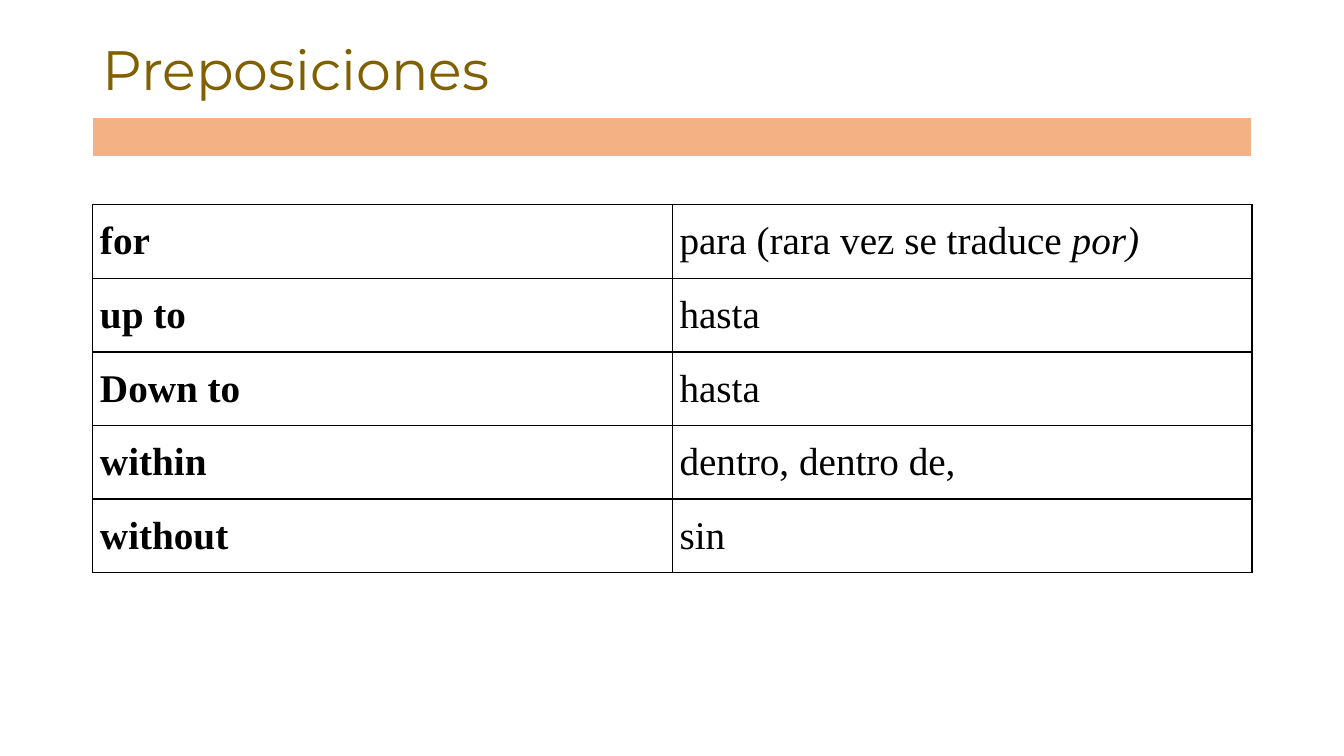
from lxml import etree
from pptx import Presentation
from pptx.dml.color import RGBColor
from pptx.enum.text import MSO_ANCHOR, MSO_AUTO_SIZE
from pptx.oxml.ns import qn
from pptx.util import Cm, Pt

MIDDLE = MSO_ANCHOR.MIDDLE
NO_AUTOFIT = MSO_AUTO_SIZE.NONE
TITLE_ONLY = 5

COLORS = {"title": "806000", "bar": "F4B183", "ink": "000000", "paper": "FFFFFF"}
TITLE_FONT = "Montserrat"
TABLE_FONT = "Times New Roman"

LEFT, WIDTH = 2.34, 29.21
PREPOSITIONS = [
    ("for", "para (rara vez se traduce ", "por)"),
    ("up to", "hasta", ""),
    ("Down to", "hasta", ""),
    ("within", "dentro, dentro de,", ""),
    ("without", "sin", ""),
]


def add_text(paragraph, text, font=TABLE_FONT, size=28, color="ink", bold=False, italic=False):
    run = paragraph.add_run()
    run.text = text
    run.font.name = font
    run.font.size = Pt(size)
    run.font.color.rgb = RGBColor.from_string(COLORS[color])
    run.font.bold = bold
    run.font.italic = italic


def format_cell(cell, fill, border, bottom_width=1):
    cell.fill.solid()
    cell.fill.fore_color.rgb = RGBColor.from_string(COLORS[fill])
    cell.vertical_anchor = MIDDLE
    cell.margin_left = cell.margin_right = Cm(0.18)
    cell.margin_top = cell.margin_bottom = 0
    properties = cell._tc.get_or_add_tcPr()
    widths = {"lnL": 1, "lnR": 1, "lnT": 1, "lnB": bottom_width}
    for index, (side, width) in enumerate(widths.items()):
        line = etree.Element(qn(f"a:{side}"), w=str(Pt(width)))
        solid = etree.SubElement(line, qn("a:solidFill"))
        etree.SubElement(solid, qn("a:srgbClr"), val=COLORS[border])
        properties.insert(index, line)


def add_plain_table(slide, rows, columns, left, top, width, height):
    frame = slide.shapes.add_table(rows, columns, Cm(left), Cm(top), Cm(width), Cm(height))
    table = frame.table
    table.first_row = False
    table.horz_banding = False
    return table


def place_title(slide, left, top, width, height):
    title = slide.shapes.title
    title.left, title.top, title.width, title.height = map(Cm, (left, top, width, height))
    frame = title.text_frame
    frame.word_wrap = True
    frame.auto_size = NO_AUTOFIT
    frame.vertical_anchor = MIDDLE
    paragraph = frame.paragraphs[0]
    paragraph.alignment = 1
    paragraph.line_spacing = 0.9
    add_text(paragraph, "Preposiciones", font=TITLE_FONT, size=39.6, color="title")


def place_bar(slide, left, top, width, height):
    table = add_plain_table(slide, 1, 1, left, top, width, height)
    format_cell(table.cell(0, 0), "bar", "paper", bottom_width=3)


def place_prepositions(slide, left, top, width, height):
    table = add_plain_table(slide, len(PREPOSITIONS), 2, left, top, width, height)
    for row, (english, spanish, example) in enumerate(PREPOSITIONS):
        term, meaning = table.cell(row, 0), table.cell(row, 1)
        for cell in (term, meaning):
            format_cell(cell, "paper", "ink")
        add_text(term.text_frame.paragraphs[0], english, bold=True)
        paragraph = meaning.text_frame.paragraphs[0]
        add_text(paragraph, spanish)
        if example:
            add_text(paragraph, example, italic=True)


def main():
    presentation = Presentation()
    presentation.slide_width = Cm(33.87)
    presentation.slide_height = Cm(19.05)
    slide = presentation.slides.add_slide(presentation.slide_layouts[TITLE_ONLY])
    place_title(slide, LEFT, 1.02, WIDTH, 1.6)
    place_bar(slide, LEFT, 2.95, WIDTH, 1.04)
    place_prepositions(slide, LEFT, 5.16, WIDTH, 9.27)
    presentation.save("out.pptx")


if __name__ == "__main__":
    main()
